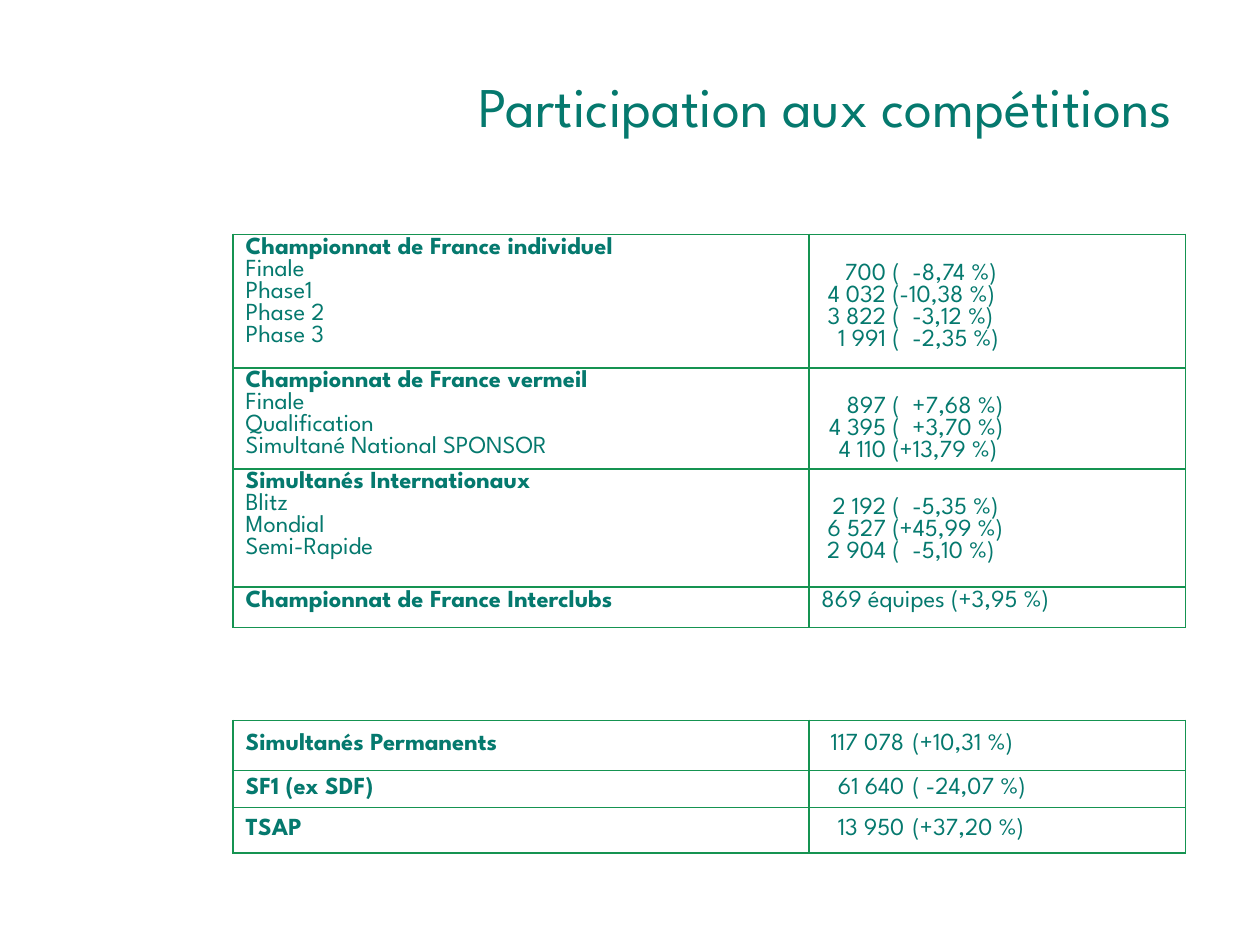
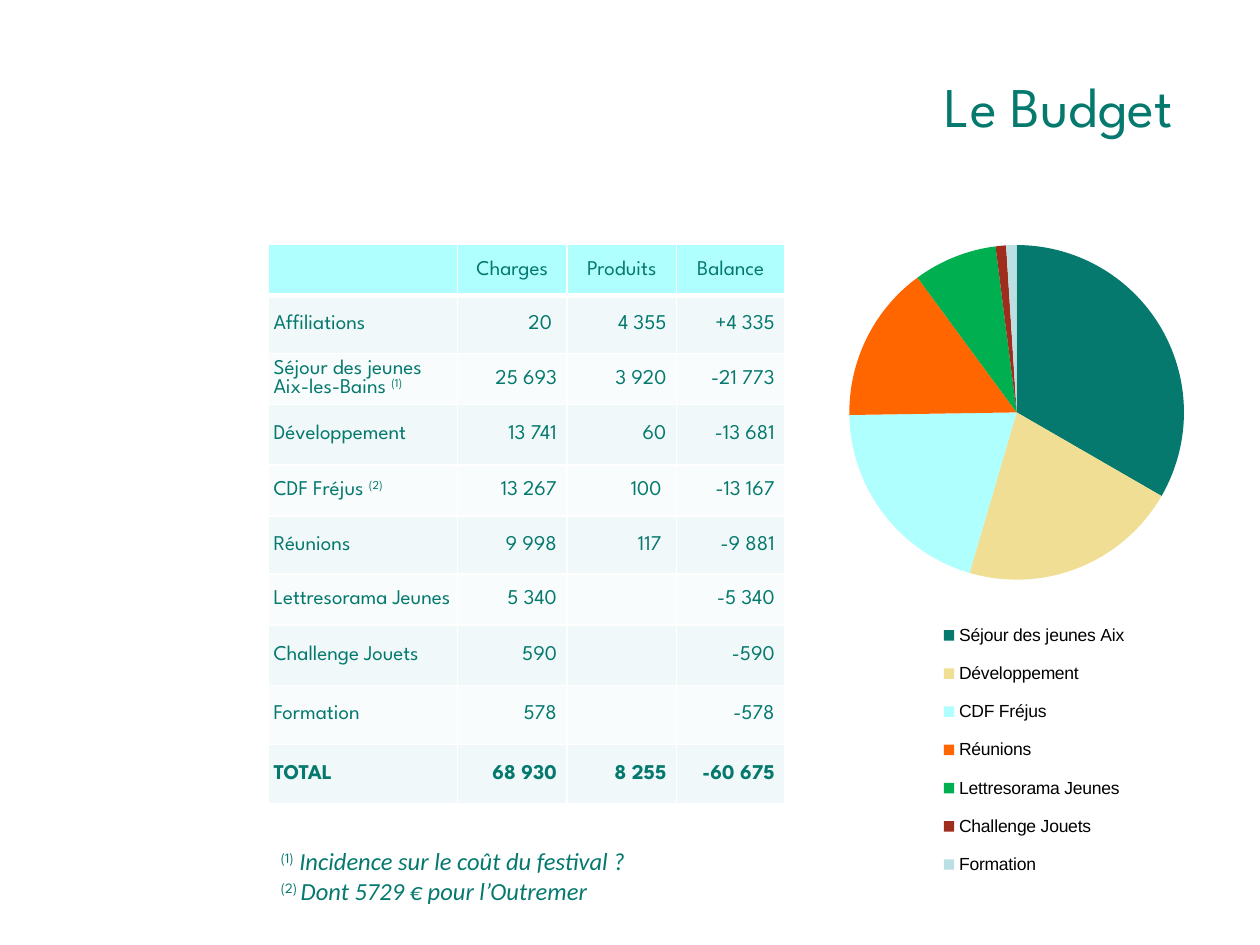
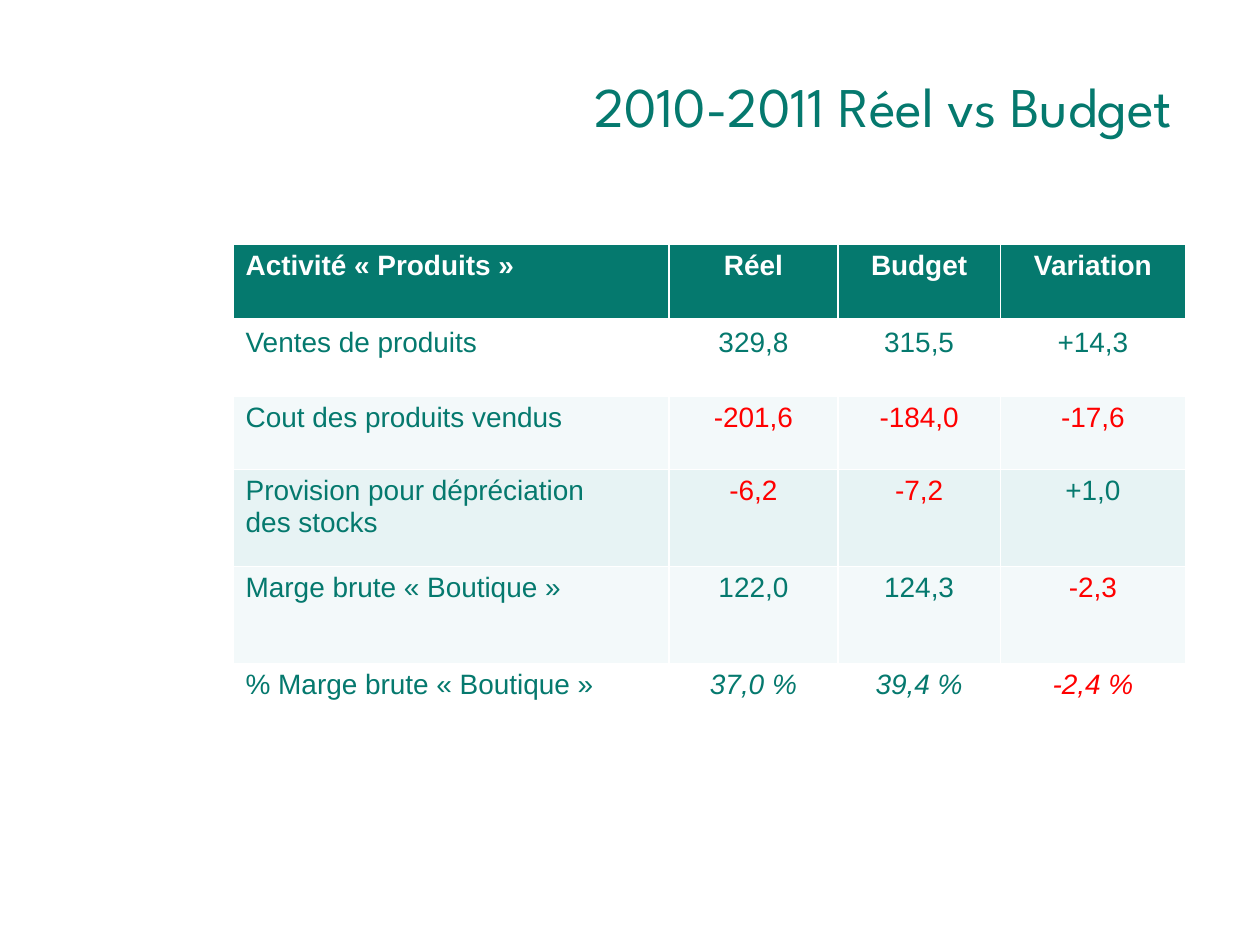
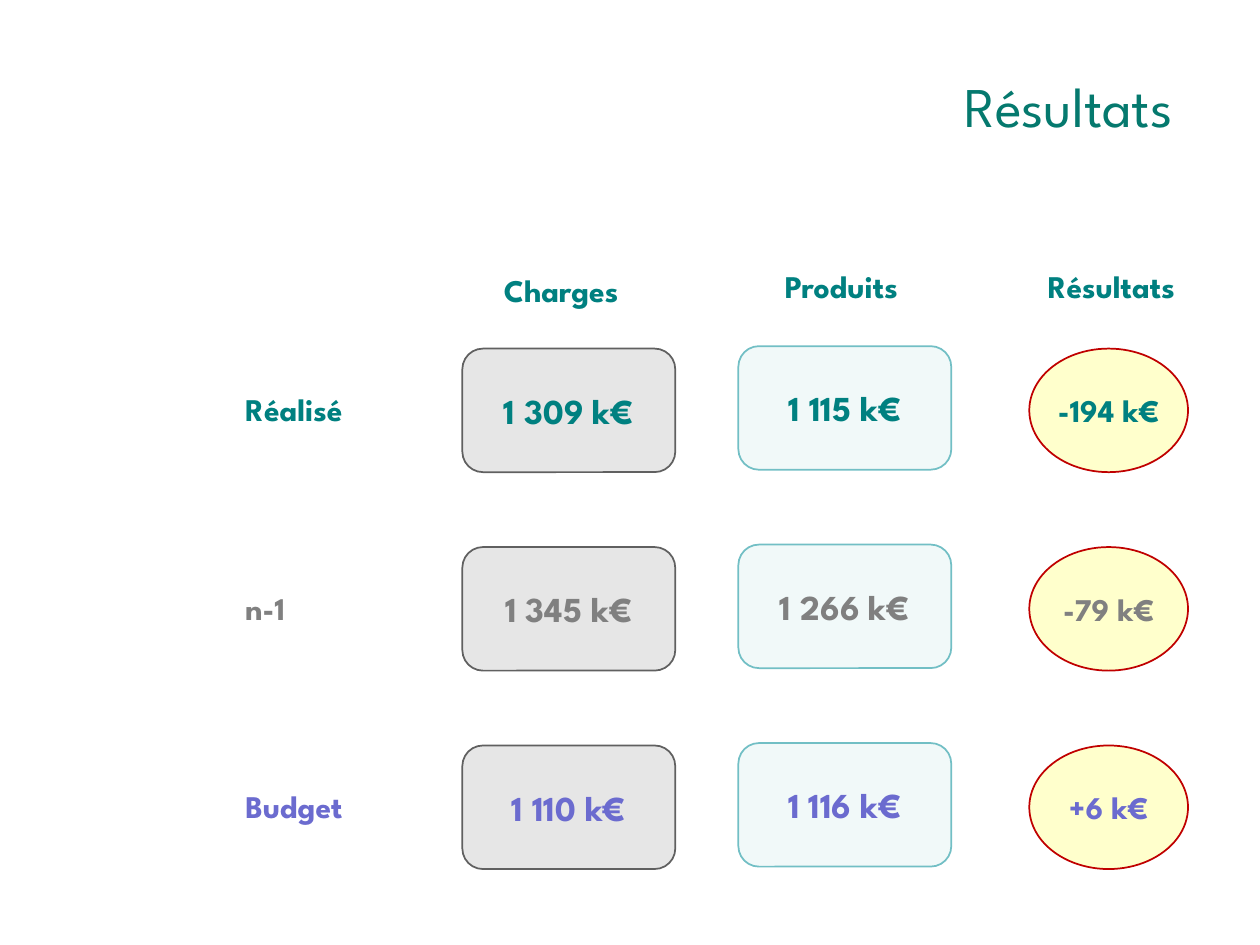
from lxml.etree import SubElement
from pptx import Presentation
from pptx.chart.data import CategoryChartData
from pptx.dml.color import RGBColor
from pptx.enum.chart import XL_CHART_TYPE as ChartType, XL_LEGEND_POSITION as LegendPosition
from pptx.enum.shapes import MSO_SHAPE as Preset
from pptx.enum.text import MSO_ANCHOR as Anchor, MSO_AUTO_SIZE as AutoSize, PP_ALIGN as Align
from pptx.oxml.ns import qn
from pptx.util import Pt

GREEN = "05796E"
TEAL = "008080"
GREY = "808080"
VIOLET = "6B6BCF"
RED = "FF0000"
WHITE = "FFFFFF"
TITLE_FONT = "League Spartan"
INSETS = (7.2, 3.6, 7.2, 3.6)
CONTENT_LEFT = 133.2


def rgb(value):
    return RGBColor.from_string(value)


def write(frame, lines, size=14, color=GREEN, font=TITLE_FONT, bold=False, italic=False,
          align=Align.LEFT, spacing=None, before=0, tabs=()):
    for index, line in enumerate(lines):
        paragraph = frame.paragraphs[0] if index == 0 else frame.add_paragraph()
        paragraph.alignment = align
        if spacing:
            paragraph.line_spacing = spacing
        if index and before:
            paragraph.space_before = Pt(before)
        if tabs:
            tab_list = SubElement(paragraph._p.get_or_add_pPr(), qn("a:tabLst"))
            for position, side in tabs:
                SubElement(tab_list, qn("a:tab"), pos=str(Pt(position)), algn=side)
        for text, style in [(line, {})] if isinstance(line, str) else line:
            run = paragraph.add_run()
            run.text = text
            run.font.name = style.get("font", font)
            run.font.size = Pt(size)
            run.font.bold = style.get("bold", bold)
            run.font.italic = style.get("italic", italic)
            run.font.color.rgb = rgb(color)
            if style.get("raised"):
                run._r.get_or_add_rPr().set("baseline", "30000")


def place_manually(parent, index, inner, **fractions):
    for old in parent.findall(qn("c:layout")):
        parent.remove(old)
    layout = parent.makeelement(qn("c:layout"), {})
    parent.insert(index, layout)
    manual = SubElement(layout, qn("c:manualLayout"))
    settings = {"layoutTarget": "inner"} if inner else {}
    settings |= {"xMode": "edge", "yMode": "edge", **fractions}
    for name, value in settings.items():
        SubElement(manual, qn(f"c:{name}"), val=str(value))


class Deck:
    def __init__(self):
        self.presentation = Presentation()
        self.presentation.slide_width = Pt(720)
        self.presentation.slide_height = Pt(540)
        self.slide = None

    def add_slide(self, title):
        self.slide = self.presentation.slides.add_slide(self.presentation.slide_layouts[5])
        shape = self.slide.shapes.title
        shape.left, shape.top, shape.width, shape.height = Pt(0), Pt(37.4), Pt(677.5), Pt(45.4)
        frame = shape.text_frame
        frame.auto_size = AutoSize.NONE
        frame.vertical_anchor = Anchor.MIDDLE
        write(frame, [title], size=32, align=Align.RIGHT)

    def table(self, left, top, widths, heights):
        shape = self.slide.shapes.add_table(len(heights), len(widths), Pt(left), Pt(top),
                                            Pt(sum(widths)), Pt(sum(heights)))
        table = shape.table
        table.first_row = table.horz_banding = False
        for column, width in zip(table.columns, widths):
            column.width = Pt(width)
        for row, height in zip(table.rows, heights):
            row.height = Pt(height)
        return table

    def cell(self, cell, lines, fill=None, border=WHITE, bottom=1, insets=INSETS,
             anchor=Anchor.TOP, **style):
        cell.margin_left, cell.margin_top, cell.margin_right, cell.margin_bottom = map(Pt, insets)
        cell.vertical_anchor = anchor
        properties = cell._tc.get_or_add_tcPr()
        for side, width in zip("LRTB", (1, 1, 1, bottom)):
            line = SubElement(properties, qn(f"a:ln{side}"), w=str(Pt(width)))
            SubElement(SubElement(line, qn("a:solidFill")), qn("a:srgbClr"), val=border)
        if fill:
            cell.fill.solid()
            cell.fill.fore_color.rgb = rgb(fill)
        else:
            cell.fill.background()
        write(cell.text_frame, lines, **style)

    def text(self, left, top, width, height, lines, wrap=False, **style):
        frame = self.slide.shapes.add_textbox(Pt(left), Pt(top), Pt(width), Pt(height)).text_frame
        frame.word_wrap = wrap
        frame.auto_size = AutoSize.SHAPE_TO_FIT_TEXT
        write(frame, lines, **style)

    def shape(self, preset, left, top, width, height, text, fill, line, inset=7.2, **style):
        shape = self.slide.shapes.add_shape(preset, Pt(left), Pt(top), Pt(width), Pt(height))
        shape.shadow.inherit = False
        shape.fill.solid()
        shape.fill.fore_color.rgb = rgb(fill)
        shape.line.color.rgb = rgb(line)
        shape.line.width = Pt(1)
        frame = shape.text_frame
        frame.margin_left = frame.margin_right = Pt(inset)
        frame.vertical_anchor = Anchor.MIDDLE
        write(frame, [text], align=Align.CENTER, **style)

    def pie(self, left, top, width, height, slices):
        data = CategoryChartData()
        data.categories = [name for name, value, color in slices]
        data.add_series("Series 1", [value for name, value, color in slices])
        chart = self.slide.shapes.add_chart(ChartType.PIE, Pt(left), Pt(top), Pt(width),
                                            Pt(height), data).chart
        chart.has_title = False
        chart.font.name = "Arial"
        chart.font.size = Pt(10)
        chart.font.color.rgb = rgb("000000")
        chart.has_legend = True
        chart.legend.position = LegendPosition.RIGHT
        chart.legend.include_in_layout = False
        plot = chart.plots[0]
        plot.vary_by_categories = True
        for index, (name, value, color) in enumerate(slices):
            fill = plot.series[0].points[index].format.fill
            fill.solid()
            fill.fore_color.rgb = rgb(color)
        place_manually(plot._element.getparent(), 0, True, x=0.097, y=0.001, w=0.803, h=0.503)
        place_manually(chart.legend._element, 1, False, x=0.31, y=0.545, w=0.46, h=0.43)


def add_participation(deck):
    deck.add_slide("Participation aux compétitions")
    widths = (329, 215.3)
    style = dict(border="159351", spacing=0.75, before=2.8)
    groups = [
        ("Championnat de France individuel", 76.3, ["Finale", "Phase1", "Phase 2", "Phase 3"],
         ["\t700\t(\t-8,74 %)", "\t4 032\t(-10,38 %)", "\t3 822\t(\t-3,12 %)",
          "\t1 991\t(\t-2,35 %)"]),
        ("Championnat de France vermeil", 57.6,
         ["Finale", "Qualification", "Simultané National SPONSOR"],
         ["\t897\t(\t+7,68 %)", "\t4 395\t(\t+3,70 %)", "\t4 110\t(+13,79 %)"]),
        ("Simultanés Internationaux", 67.7, ["Blitz", "Mondial", "Semi-Rapide"],
         ["\t2 192\t(\t-5,35 %)", "\t6 527\t(+45,99 %)", "\t2 904\t(\t-5,10 %)"]),
        ("Championnat de France Interclubs", 23, [], ["869 équipes (+3,95 %)"]),
    ]
    table = deck.table(CONTENT_LEFT, 134, widths, [height for _, height, _, _ in groups])
    for row, (heading, _, labels, figures) in enumerate(groups):
        deck.cell(table.cell(row, 0), [[(heading, {"bold": True})], *labels], **style)
        insets = (7.2, 18.5, 7.2, 3.6) if labels else INSETS
        tabs = [(37, "r"), (40.5, "l"), (52, "l")] if labels else ()
        deck.cell(table.cell(row, 1), figures, insets=insets, tabs=tabs, **style)

    permanents = [
        ("Simultanés Permanents", 28.8, "\t117 078\t(+10,31 %)"),
        ("SF1 (ex SDF)", 21, "\t61 640\t( -24,07 %)"),
        ("TSAP", 26, "\t13 950\t(+37,20 %)"),
    ]
    table = deck.table(CONTENT_LEFT, 411.6, widths, [height for _, height, _ in permanents])
    for row, (label, _, figure) in enumerate(permanents):
        deck.cell(table.cell(row, 0), [label], bold=True, anchor=Anchor.MIDDLE, **style)
        deck.cell(table.cell(row, 1), [figure], anchor=Anchor.MIDDLE,
                  tabs=[(47.5, "r"), (52, "l")], **style)


def add_budget(deck):
    deck.add_slide("Le Budget")
    raised = {"raised": True}
    rows = [
        ("", "Charges", "Produits", "Balance"),
        ("Affiliations", "20", "4 355", "+4 335"),
        ([("Séjour des jeunes Aix-les-Bains ", {}), ("(1)", raised)],
         "25 693", "3 920", "-21 773"),
        ("Développement", "13 741", "60", "-13 681"),
        ([("CDF Fréjus ", {}), ("(2)", raised)], "13 267", "100", "-13 167"),
        ("Réunions", "9 998", "117", "-9 881"),
        ("Lettresorama Jeunes", "5 340", "", "-5 340"),
        ("Challenge Jouets", "590", "", "-590"),
        ("Formation", "578", "", "-578"),
        ("TOTAL", "68 930", "8 255", "-60 675"),
    ]
    nudged = {(1, 1), (4, 2), (5, 2)}
    table = deck.table(153.4, 139.7, (108, 62.6, 62.6, 61.9),
                       (29.3, 33, 29.3, 34.4, 29.3, 33, 29.3, 34.4, 33.8, 33.8))
    for row, values in enumerate(rows):
        for column, value in enumerate(values):
            if row == 0:
                look = dict(fill="AFFFFF", bottom=3, align=Align.CENTER, insets=(0, 0, 0, 0))
            else:
                look = dict(fill="F1F8F9" if row % 2 else "F8FCFC")
                if column == 0:
                    look.update(insets=(2.9, 0, 0, 0))
                else:
                    right = 8.6 if (row, column) in nudged else 5.8
                    look.update(insets=(0, 0, right, 0), align=Align.RIGHT)
            deck.cell(table.cell(row, column), [value] if value else [], size=12,
                      bold=values[0] == "TOTAL", anchor=Anchor.MIDDLE, **look)

    deck.pie(462.2, 139.7, 238.3, 380.2, [
        ("Séjour des jeunes Aix", 33, GREEN),
        ("Développement", 21, "EFDE94"),
        ("CDF Fréjus", 20, "AFFFFF"),
        ("Réunions", 15, "FF6600"),
        ("Lettresorama Jeunes", 8, "00B050"),
        ("Challenge Jouets", 1, "9E2D1D"),
        ("Formation", 1, "BBE0E3"),
    ])
    note = {"font": "Calibri", "italic": True}
    deck.text(153.4, 480.2, 360, 41, [
        [("(1)", raised), (" Incidence sur le coût du festival ?", note)],
        [("(2) ", raised), ("Dont 5729 € pour l’Outremer", note)],
    ], wrap=True)


def add_comparison(deck):
    deck.add_slide("2010-2011 Réel vs Budget")
    rows = [
        (GREEN, "Activité « Produits »", "Réel", "Budget", "Variation"),
        (None, "Ventes de produits", "329,8", "315,5", "+14,3"),
        ("F3F9FA", "Cout des produits vendus", "-201,6", "-184,0", "-17,6"),
        ("E7F3F4", "Provision pour dépréciation\ndes stocks", "-6,2", "-7,2", "+1,0"),
        ("F3F9FA", "Marge brute « Boutique »", "122,0", "124,3", "-2,3"),
        (None, "% Marge brute « Boutique »", "37,0 %", "39,4 %", "-2,4 %"),
    ]
    table = deck.table(CONTENT_LEFT, 139.7, (249.1, 96.5, 92.9, 105.8),
                       (43.6, 43.2, 41.8, 55.4, 55.4, 41.8))
    for row, (fill, *values) in enumerate(rows):
        for column, value in enumerate(values):
            color = WHITE if row == 0 else RED if value.startswith("-") else GREEN
            deck.cell(table.cell(row, column), value.split("\n"), fill=fill,
                      bottom=1 if row else 3, size=16, font="Arial", color=color, bold=row == 0,
                      italic=column > 0 and value.endswith("%"),
                      align=Align.CENTER if column else Align.LEFT)


def add_results(deck):
    deck.add_slide("Résultats")
    headings = [("Charges", 280.8, 151.2, 88.6), ("Produits", 441.4, 149, 82.8),
                ("Résultats", 591.8, 149, 90.7)]
    for heading, left, top, width in headings:
        deck.text(left, top, width, 28.8, [heading], size=18, color=TEAL, bold=True)

    rows = [
        ("Réalisé", 77, TEAL, "1 309 k€", "1 115 k€", "-194 k€"),
        ("n-1", 43.2, GREY, "1 345 k€", "1 266 k€", "-79 k€"),
        ("Budget", 79.2, VIOLET, "1 110 k€", "1 116 k€", "+6 k€"),
    ]
    for index, (label, width, color, charges, products, result) in enumerate(rows):
        top = 199.2 + 113.4 * index
        style = dict(color=color, bold=True)
        deck.text(CONTENT_LEFT, top + 20.4, width, 28.8, [label], size=18, **style)
        deck.shape(Preset.ROUNDED_RECTANGLE, 264.2, top, 121.7, 70.6, charges,
                   "E6E6E6", "606060", size=20, **style)
        deck.shape(Preset.ROUNDED_RECTANGLE, 421.9, top - 1.4, 121.7, 70.6, products,
                   "F1F9F9", "72BFC5", size=20, **style)
        deck.shape(Preset.OVAL, 588.2, top, 90.7, 70.6, result,
                   "FFFFCC", "C00000", inset=0, size=18, **style)


def main():
    deck = Deck()
    add_participation(deck)
    add_budget(deck)
    add_comparison(deck)
    add_results(deck)
    deck.presentation.save("out.pptx")


if __name__ == "__main__":
    main()
